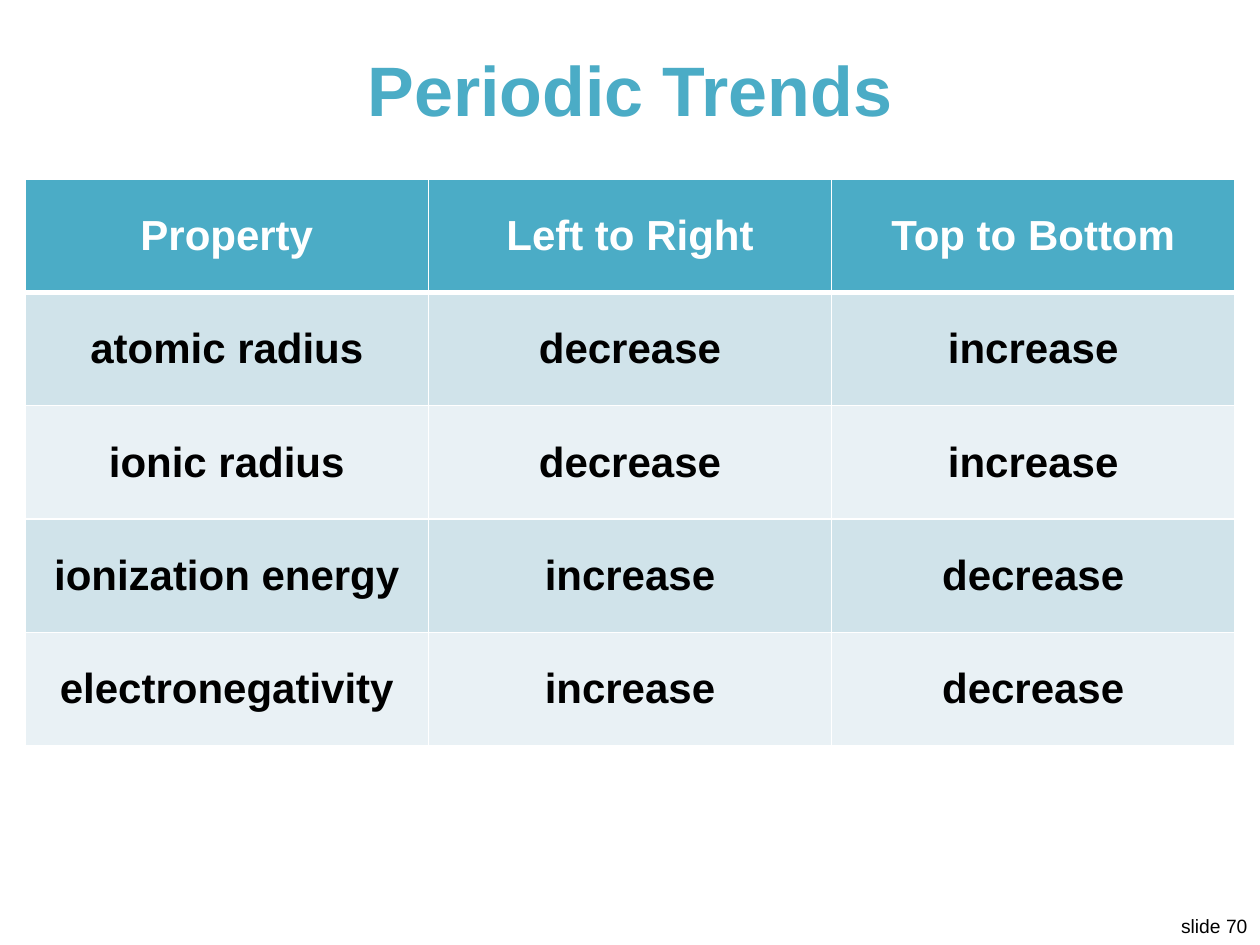
from lxml.etree import SubElement
from pptx import Presentation
from pptx.dml.color import RGBColor
from pptx.enum.text import MSO_ANCHOR, MSO_AUTO_SIZE, PP_ALIGN
from pptx.oxml.ns import qn
from pptx.util import Pt

TEAL, WHITE, BLACK = "4BACC6", "FFFFFF", "000000"
BANDS = ["D0E3EA", "E9F1F5"]
TRENDS = [
    ["Property", "Left to Right", "Top to Bottom"],
    ["atomic radius", "decrease", "increase"],
    ["ionic radius", "decrease", "increase"],
    ["ionization energy", "increase", "decrease"],
    ["electronegativity", "increase", "decrease"],
]
TITLE = {"size": Pt(40), "bold": True}
CELL = {"size": Pt(24), "bold": True}
FOOTER = {"size": Pt(11), "bold": False}


def color(value):
    return RGBColor.from_string(value)


def write(frame, text, font_format, fill, align):
    para = frame.paragraphs[0]
    para.alignment = align
    span = para.add_run()
    span.text = text
    for name, value in {"name": "Arial", **font_format}.items():
        setattr(span.font, name, value)
    span.font.color.rgb = color(fill)


def add_text(page, box, text, font_format, fill, align, frame_format):
    frame = page.shapes.add_textbox(*map(Pt, box)).text_frame
    for name, value in frame_format.items():
        setattr(frame, name, value)
    write(frame, text, font_format, fill, align)


def add_title(page, box):
    frame_format = {"word_wrap": True, "vertical_anchor": MSO_ANCHOR.MIDDLE}
    add_text(page, box, "Periodic Trends", TITLE, TEAL, PP_ALIGN.CENTER, frame_format)


def add_slide_number(page, box):
    frame_format = {"word_wrap": False, "auto_size": MSO_AUTO_SIZE.SHAPE_TO_FIT_TEXT}
    add_text(page, box, "slide 70", FOOTER, BLACK, PP_ALIGN.RIGHT, frame_format)


def add_borders(cell, widths):
    properties = cell._tc.get_or_add_tcPr()
    for side, width in zip("LRTB", widths):
        line = SubElement(properties, qn(f"a:ln{side}"), w=str(Pt(width)))
        SubElement(SubElement(line, qn("a:solidFill")), qn("a:srgbClr"), val=WHITE)


def add_trend_table(page, box):
    rows, columns = len(TRENDS), len(TRENDS[0])
    table = page.shapes.add_table(rows, columns, *map(Pt, box)).table
    for row, texts in enumerate(TRENDS):
        header = row == 0
        fill = TEAL if header else BANDS[(row - 1) % 2]
        widths = [1, 1, 3 if row == 1 else 1, 3 if header else 1]
        for column, text in enumerate(texts):
            cell = table.cell(row, column)
            add_borders(cell, widths)
            cell.fill.solid()
            cell.fill.fore_color.rgb = color(fill)
            cell.vertical_anchor = MSO_ANCHOR.MIDDLE
            write(cell.text_frame, text, CELL, WHITE if header else BLACK, PP_ALIGN.CENTER)


def main():
    deck = Presentation()
    deck.slide_width, deck.slide_height = Pt(720), Pt(540)
    page = deck.slides.add_slide(deck.slide_layouts[6])
    add_slide_number(page, (666, 519, 54, 21))
    add_title(page, (14.4, 21.6, 691.2, 57.6))
    add_trend_table(page, (14.4, 102.24, 691.2, 324))
    deck.save("out.pptx")


if __name__ == "__main__":
    main()
